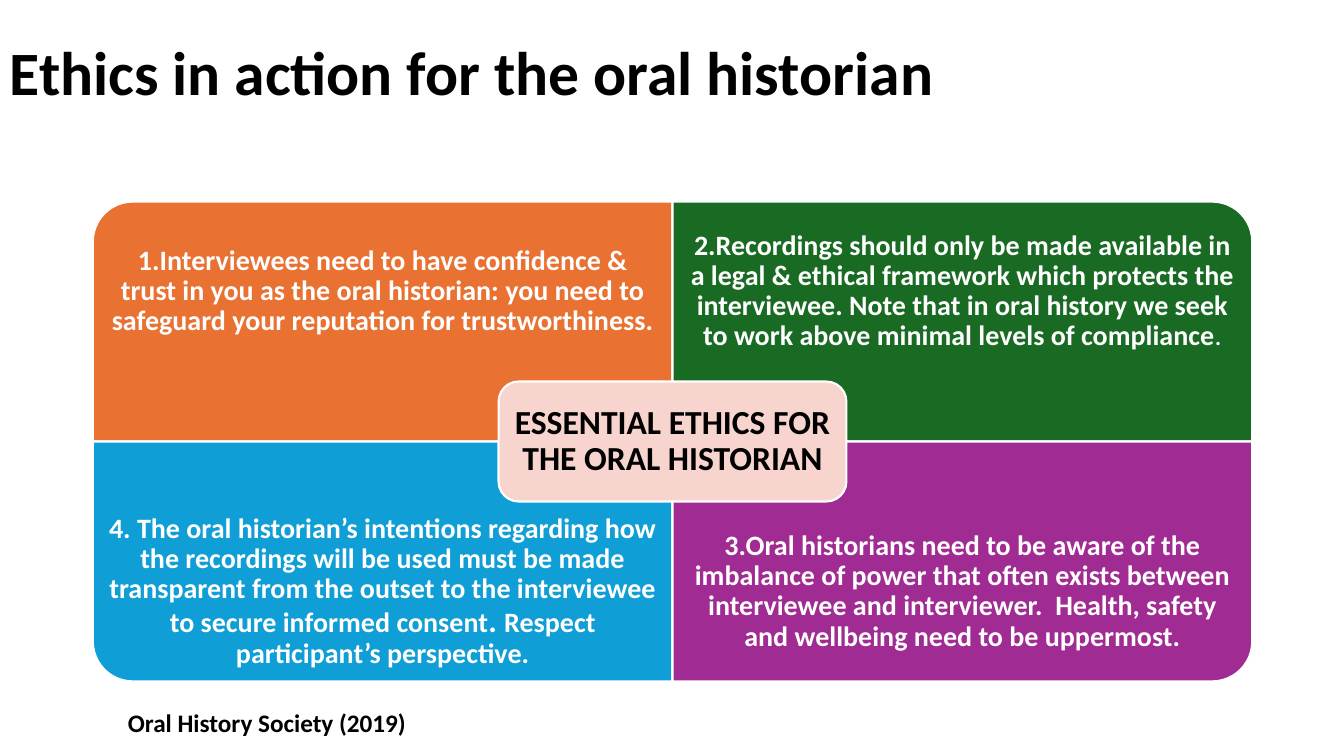
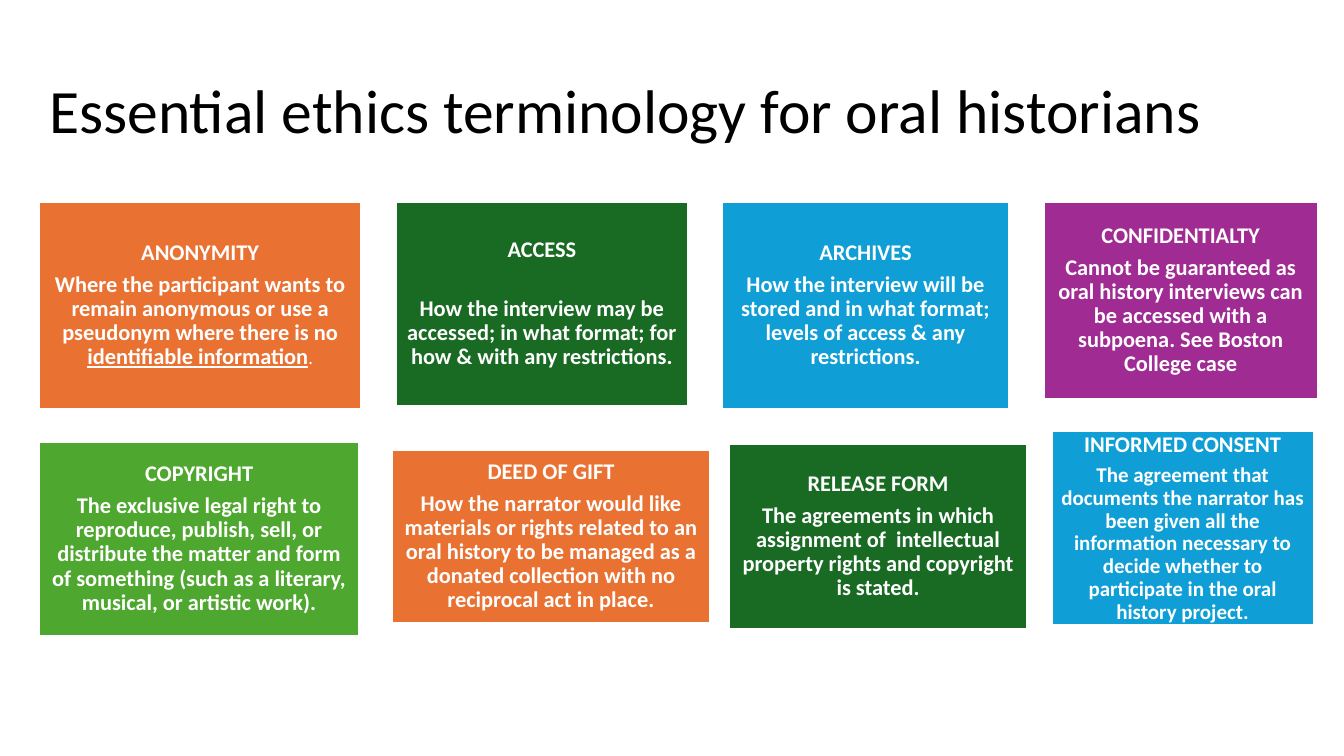
"""Build two slides on ethics for oral historians."""
from dataclasses import dataclass

from pptx import Presentation
from pptx.dml.color import RGBColor
from pptx.enum.shapes import MSO_SHAPE
from pptx.enum.text import MSO_ANCHOR, PP_ALIGN
from pptx.util import Inches, Pt

RECT, ROUNDED, ONE_ROUND = MSO_SHAPE.RECTANGLE, MSO_SHAPE.ROUNDED_RECTANGLE, MSO_SHAPE.ROUND_1_RECTANGLE
LEFT, CENTER = PP_ALIGN.LEFT, PP_ALIGN.CENTER
TOP, MIDDLE = MSO_ANCHOR.TOP, MSO_ANCHOR.MIDDLE


@dataclass(frozen=True)
class Theme:
    font: str = "Calibri"
    black: str = "000000"
    white: str = "FFFFFF"
    orange: str = "E97132"
    forest: str = "196B24"
    blue: str = "0F9ED5"
    purple: str = "A02B93"
    green: str = "4EA72E"
    blush: str = "F7D5CE"
    title: float = 44
    hub: float = 24
    principle: float = 20
    source: float = 18
    term: float = 16
    outline: float = 1.5
    tight: float = 0.9
    after: float = 0.35


THEME = Theme()

ETHICS_TITLE = "Ethics in action for the oral historian"
HUB = "ESSENTIAL ETHICS FOR THE ORAL HISTORIAN"
SOURCE = "Oral History Society (2019)"
PRINCIPLES = [
    (0, 0, 270, THEME.orange, [
        ("1.Interviewees need to have confidence & trust in you as the oral historian: "
         "you need to safeguard your reputation for trustworthiness.", {})]),
    (1, 0, 0, THEME.forest, [
        ("2.Recordings should only be made available in a legal & ethical framework which protects "
         "the interviewee. Note that in oral history we seek to work above minimal levels of compliance", {}),
        (".", {"bold": False})]),
    (0, 1, 180, THEME.blue, [
        ("4. The oral historian’s intentions regarding how the recordings will be used must be made "
         "transparent from the outset to the interviewee to secure informed consent", {}),
        (". ", {"size": 23}),
        ("Respect participant’s perspective.", {})]),
    (1, 1, 90, THEME.purple, [
        ("3.Oral historians need to be aware of the imbalance of power that often exists between "
         "interviewee and interviewer.  Health, safety and wellbeing need to be uppermost.", {})]),
]

TERMS_TITLE = "Essential ethics terminology for oral historians"
TERMS = [
    ("ANONYMITY", [
        ("Where the participant wants to remain anonymous or use a pseudonym where there is no ", {}),
        ("identifiable information", {"underline": True}),
        (".", {"size": 13, "bold": False})],
     THEME.orange, (0.39, 2, 3.19, 2.06), {}),
    ("ACCESS", [("How the interview may be accessed; in what format; for how & with any restrictions.", {})],
     THEME.forest, (3.93, 2, 2.89, 2.03), {"heading_after": 24.3}),
    ("ARCHIVES", [("How the interview will be stored and in what format; levels of access & any restrictions.", {})],
     THEME.blue, (7.16, 2, 2.85, 2.06), {}),
    ("CONFIDENTIALTY", [
        ("Cannot be guaranteed as oral history interviews can be accessed with a subpoena. "
         "See Boston College case", {})],
     THEME.purple, (10.35, 2, 2.72, 1.96), {}),
    ("COPYRIGHT", [
        ("The exclusive legal right to reproduce, publish, sell, or distribute the matter and form "
         "of something (such as a literary, musical, or artistic work).", {})],
     THEME.green, (0.39, 4.38, 3.17, 1.93), {}),
    ("DEED OF GIFT", [
        ("How the narrator would like materials or rights related to an oral history to be managed "
         "as a donated collection with no reciprocal act in place.", {})],
     THEME.orange, (3.89, 4.46, 3.15, 1.72), {}),
    ("RELEASE FORM", [
        ("The agreements in which assignment of  intellectual property rights and copyright is stated.", {})],
     THEME.forest, (7.23, 4.4, 2.96, 1.84), {}),
    ("INFORMED CONSENT", [
        ("The agreement that documents the narrator has been given all the information necessary to "
         "decide whether to participate in the oral history project.", {"size": 15})],
     THEME.blue, (10.43, 4.28, 2.6, 1.92), {}),
]


def write(holder, paragraphs, *, size, color=THEME.white, bold=True, align=CENTER, anchor=MIDDLE,
          inset=None, spacing=THEME.tight, after=THEME.after, heading_after=None):
    """Fill a shape with paragraphs, each a list of (text, overrides) runs."""
    frame = holder.text_frame
    frame.word_wrap = True
    frame.vertical_anchor = anchor
    if inset is not None:
        frame.margin_left = frame.margin_right = frame.margin_top = frame.margin_bottom = Inches(inset)
    for index, runs in enumerate(paragraphs):
        paragraph = frame.add_paragraph() if index else frame.paragraphs[0]
        paragraph.alignment = align
        paragraph.line_spacing = spacing
        paragraph.space_after = Pt(size * after)
        if heading_after and index == 0:
            paragraph.space_after = Pt(heading_after)
        for text, overrides in runs:
            run = paragraph.add_run()
            run.text = text
            font = run.font
            font.name = THEME.font
            font.size = Pt(overrides.get("size", size))
            font.bold = overrides.get("bold", bold)
            font.underline = overrides.get("underline", False)
            font.color.rgb = RGBColor.from_string(color)


def add_text(slide, box, paragraphs, **style):
    write(slide.shapes.add_textbox(*map(Inches, box)), paragraphs, **style)


def add_panel(slide, kind, box, fill):
    panel = slide.shapes.add_shape(kind, *map(Inches, box))
    panel.shadow.inherit = False
    panel.fill.solid()
    panel.fill.fore_color.rgb = RGBColor.from_string(fill)
    panel.line.color.rgb = RGBColor.from_string(THEME.white)
    panel.line.width = Pt(THEME.outline)
    return panel


def add_title(slide, text, box, bold):
    add_text(slide, box, [[(text, {})]], size=THEME.title, color=THEME.black, bold=bold, align=LEFT, after=0)


def build_ethics(slide):
    add_title(slide, ETHICS_TITLE, (0, 0.02, 11.5, 1.45), True)
    left, top, width, height, text_height = 0.92, 2, 5.75, 2.38, 1.78
    for column, row, turn, fill, runs in PRINCIPLES:
        x, y = left + column * width, top + row * height
        w, h = (height, width) if turn % 180 else (width, height)
        quadrant = add_panel(slide, ONE_ROUND, (x + (width - w) / 2, y + (height - h) / 2, w, h), fill)
        quadrant.rotation = turn
        add_text(slide, (x, y + row * (height - text_height), width, text_height), [runs],
                 size=THEME.principle, inset=0.16)
    hub_width, hub_height = 3.45, 1.19
    hub_box = (left + width - hub_width / 2, top + height - hub_height / 2, hub_width, hub_height)
    write(add_panel(slide, ROUNDED, hub_box, THEME.blush), [[(HUB, {})]],
          size=THEME.hub, color=THEME.black, inset=0.1)
    add_text(slide, (1.17, 6.97, 4.13, 0.4), [[(SOURCE, {})]], size=THEME.source, color=THEME.black,
             align=LEFT, anchor=TOP, spacing=1, after=0)


def build_terms(slide):
    add_title(slide, TERMS_TITLE, (0.39, 0.4, 12.44, 1.45), False)
    for term, meaning, fill, box, style in TERMS:
        write(add_panel(slide, RECT, box, fill), [[(term, {})], meaning],
              size=THEME.term, inset=0.07, **style)


def main():
    deck = Presentation()
    deck.slide_width, deck.slide_height = Inches(13.33), Inches(7.5)
    blank = deck.slide_layouts[6]
    for build in (build_ethics, build_terms):
        build(deck.slides.add_slide(blank))
    deck.save("out.pptx")


if __name__ == "__main__":
    main()
